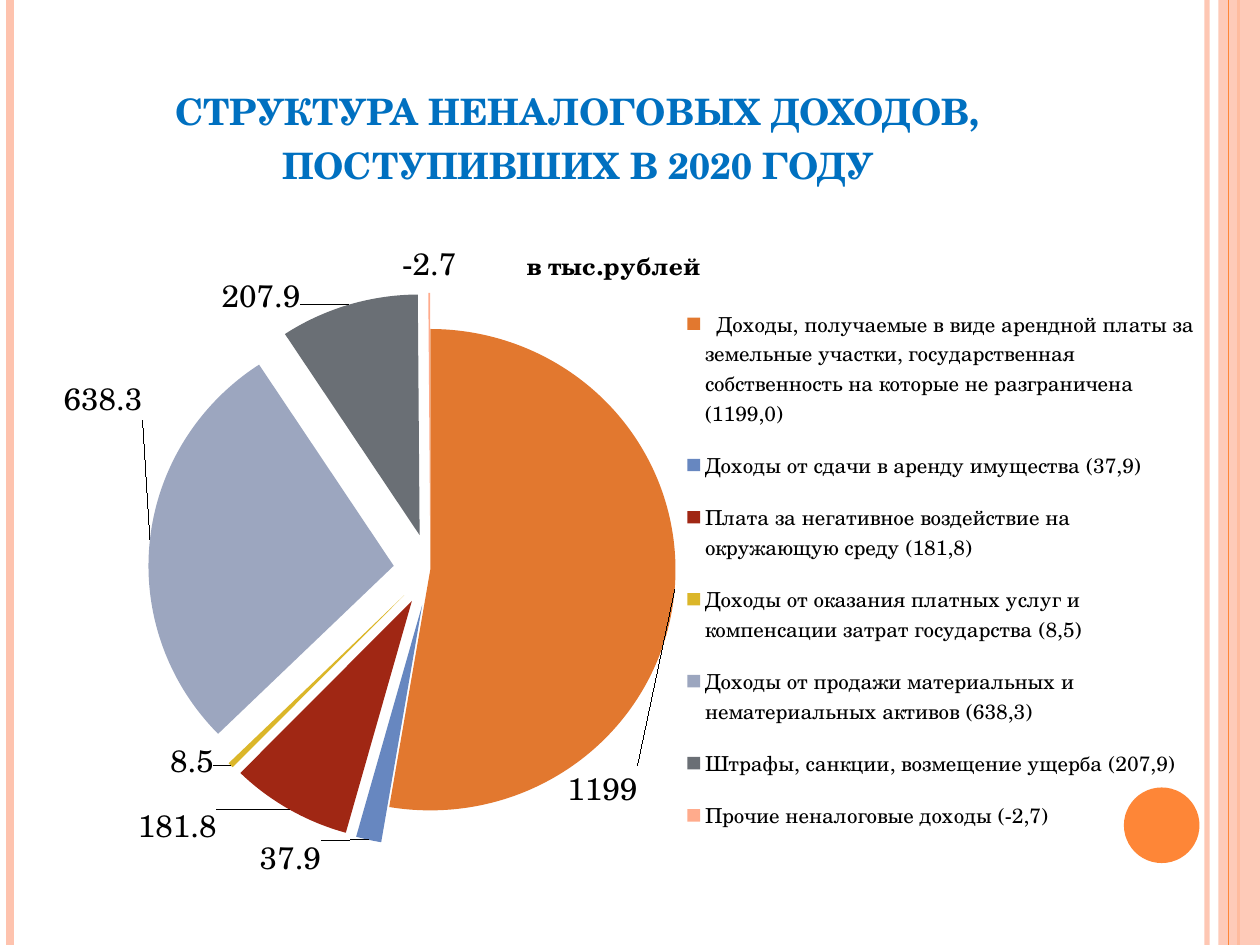
from dataclasses import dataclass
from typing import Optional

from lxml.etree import SubElement
from pptx import Presentation
from pptx.chart.data import CategoryChartData
from pptx.dml.color import RGBColor
from pptx.enum.chart import XL_CHART_TYPE, XL_LABEL_POSITION, XL_LEGEND_POSITION
from pptx.enum.shapes import MSO_CONNECTOR, MSO_SHAPE
from pptx.enum.text import MSO_ANCHOR, PP_ALIGN
from pptx.oxml import parse_xml
from pptx.oxml.ns import nsdecls, qn
from pptx.util import Inches, Pt


@dataclass(frozen=True)
class Theme:
    font: str = "TeX Gyre Schola"
    title: str = "0070C0"
    text: str = "000000"
    pale: str = "FEC3AE"
    accent: str = "FE8637"
    head_size: int = 26
    label_size: int = 18
    unit_size: int = 14
    legend_size: int = 12


@dataclass(frozen=True)
class Rule:
    x: float
    color: str
    width: float
    alpha: int = 100


@dataclass(frozen=True)
class Slice:
    name: str
    value: float
    color: str
    shift: Optional[tuple[float, float]] = None


THEME = Theme()
RULES = [
    Rule(9.58, THEME.pale, 3, 93),
    Rule(0.08, THEME.pale, 4.5),
    Rule(9.83, THEME.accent, 1.5),
    Rule(9.75, THEME.accent, 0.75),
]
SLICES = [
    Slice("  Доходы, получаемые в виде арендной платы за земельные участки, "
          "государственная собственность на которые не разграничена (1199,0)",
          1199, "E2782F", (-0.1, 0.3)),
    Slice("Доходы от сдачи в аренду имущества (37,9)", 37.9, "6787C0", (-0.04, -0.01)),
    Slice("Плата за негативное воздействие на окружающую среду (181,8)",
          181.8, "A02714", (-0.06, -0.02)),
    Slice("Доходы от оказания платных услуг и компенсации затрат государства (8,5)",
          8.5, "DBB629", (-0.01, -0.05)),
    Slice("Доходы от продажи материальных и нематериальных активов (638,3)",
          638.3, "9CA6BF", (0, -0.18)),
    Slice("Штрафы, санкции, возмещение ущерба (207,9)", 207.9, "6A6F75", (-0.04, 0.03)),
    Slice("Прочие неналоговые доходы (-2,7)", -2.7, "FFAB8C"),
]


def paint(fill, color: str, alpha: int = 100) -> None:
    """Fill with one colour; alpha is opacity in per cent."""
    fill.solid()
    fill.fore_color.rgb = RGBColor.from_string(color)
    if alpha < 100:
        tone = fill._xPr.find(".//" + qn("a:srgbClr"))
        SubElement(tone, qn("a:alpha")).set("val", str(alpha * 1000))


def style(font, size: int, color: str, bold: bool = False) -> None:
    font.name, font.size, font.bold = THEME.font, Pt(size), bold
    font.color.rgb = RGBColor.from_string(color)


def draw_rule(slide, rule: Rule) -> None:
    line = slide.shapes.add_connector(
        MSO_CONNECTOR.STRAIGHT, Inches(rule.x), 0, Inches(rule.x), Inches(7.5))
    line.line.width = Pt(rule.width)
    paint(line.line.fill, rule.color, rule.alpha)
    SubElement(line._element.spPr, qn("a:effectLst"))


def draw_shape(slide, kind, box: tuple, color: str, alpha: int = 100) -> None:
    shape = slide.shapes.add_shape(kind, *map(Inches, box))
    shape.shadow.inherit = False
    shape.line.fill.background()
    paint(shape.fill, color, alpha)


def place(parent, index: int, inner: bool = False, edge: bool = True, **spots: float) -> None:
    """Give a chart part a manual layout, in fractions of the chart."""
    for old in parent.findall(qn("c:layout")):
        parent.remove(old)
    parts = '<c:layoutTarget val="inner"/>' if inner else ""
    if edge:
        parts += '<c:xMode val="edge"/><c:yMode val="edge"/>'
    parts += "".join(f'<c:{key} val="{val}"/>' for key, val in spots.items())
    parent.insert(index, parse_xml(
        f'<c:layout {nsdecls("c")}><c:manualLayout>{parts}</c:manualLayout></c:layout>'))


def draw_title(slide) -> None:
    title = slide.shapes.title
    title.left, title.top, title.width, title.height = map(Inches, (0.5, 0.3, 8.17, 1.25))
    frame = title.text_frame
    frame.text = "структура неналоговых доходов, поступивших в 2020 году"
    frame.word_wrap, frame.vertical_anchor = True, MSO_ANCHOR.BOTTOM
    para = frame.paragraphs[0]
    para.alignment = PP_ALIGN.CENTER
    font = para.runs[0].font
    style(font, THEME.head_size, THEME.title, True)
    font._element.set("cap", "small")


def draw_labels(plot, series) -> None:
    plot.has_data_labels = True
    labels = series.data_labels
    labels.show_value = True
    labels.position = XL_LABEL_POSITION.OUTSIDE_END
    style(labels.font, THEME.label_size, THEME.text)
    for index, item in enumerate(SLICES):
        point = series.points[index]
        paint(point.format.fill, item.color)
        if item.shift:
            label = point.data_label
            style(label.font, THEME.label_size, THEME.text)
            label.position = XL_LABEL_POSITION.OUTSIDE_END
            node = labels._element.findall(qn("c:dLbl"))[index]
            place(node, 1, edge=False, x=item.shift[0], y=item.shift[1])
    for body in labels._element.iter(qn("a:bodyPr")):
        body.set("wrap", "none")
    lead = labels._element.find(qn("c:showLeaderLines"))
    if lead is None:
        lead = SubElement(labels._element, qn("c:showLeaderLines"))
    lead.set("val", "1")


def explode(series) -> None:
    """Pull every slice out except the first."""
    first = series._element.find(qn("c:dPt"))
    first.addprevious(parse_xml(f'<c:explosion {nsdecls("c")} val="15"/>'))
    first.find(qn("c:spPr")).addprevious(
        parse_xml(f'<c:explosion {nsdecls("c")} val="0"/>'))


def draw_chart(slide) -> None:
    data = CategoryChartData()
    data.categories = [item.name for item in SLICES]
    data.add_series("Series 1", [item.value for item in SLICES])
    chart = slide.shapes.add_chart(
        XL_CHART_TYPE.PIE, *map(Inches, (0.5, 1.75, 9.11, 5.33)), data).chart
    style(chart.font, THEME.label_size, THEME.text)
    plot = chart.plots[0]
    plot.vary_by_categories = True
    draw_labels(plot, plot.series[0])
    explode(plot.series[0])
    place(plot._element.getparent(), 0, inner=True, x=0.07, y=0.11, w=0.5, h=0.84)

    frame = chart.chart_title.text_frame
    frame.text = "в тыс.рублей"
    style(frame.paragraphs[0].runs[0].font, THEME.unit_size, THEME.text, True)
    place(chart.chart_title._element, 1, x=0.4, y=0.03)

    chart.has_legend = True
    legend = chart.legend
    legend.position = XL_LEGEND_POSITION.RIGHT
    legend.include_in_layout = False
    style(legend.font, THEME.legend_size, THEME.text)
    place(legend._element, 1, x=0.54, y=0.1, w=0.45, h=0.86)


def main() -> None:
    deck = Presentation()
    deck.slide_width, deck.slide_height = Inches(10), Inches(7.5)
    slide = deck.slides.add_slide(deck.slide_layouts[5])
    for rule in RULES[:3]:
        draw_rule(slide, rule)
    draw_shape(slide, MSO_SHAPE.RECTANGLE, (9.67, 0, 0.33, 7.5), THEME.pale, 87)
    draw_rule(slide, RULES[3])
    draw_shape(slide, MSO_SHAPE.OVAL, (8.92, 6.25, 0.6, 0.6), THEME.accent)
    draw_title(slide)
    draw_chart(slide)
    deck.save("out.pptx")


if __name__ == "__main__":
    main()
